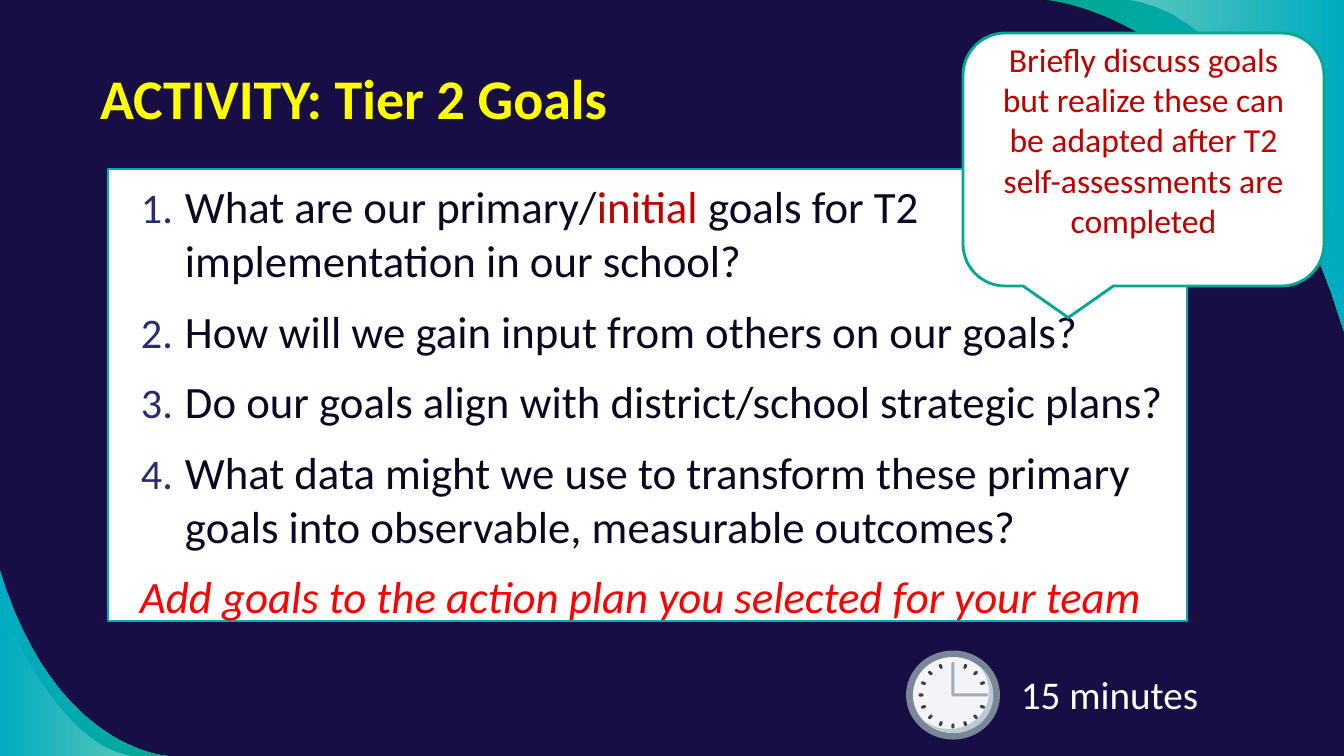
import math
from lxml import etree
from pptx import Presentation
from pptx import util as u
from pptx.dml.color import RGBColor
from pptx.enum import shapes, text
from pptx.oxml.ns import qn

PX = 914400 / 100.8
FONT = "Calibri"

NAVY = RGBColor(0x16, 0x0E, 0x44)
SHADE = RGBColor(0x12, 0x10, 0x2F)
CYAN = RGBColor(0x00, 0xAC, 0xC2)
GREEN = RGBColor(0x00, 0xA7, 0x91)
WHITE = RGBColor(0xFF, 0xFF, 0xFF)
YELLOW = RGBColor(0xFF, 0xFF, 0x00)
INK = RGBColor(0x0B, 0x07, 0x22)
NUMBER = RGBColor(0x29, 0x2C, 0x73)
DARK_RED = RGBColor(0xC0, 0x00, 0x00)
RED = RGBColor(0xFF, 0x00, 0x00)
RIM = RGBColor(0x79, 0x88, 0x98)
FACE = RGBColor(0xF2, 0xF4, 0xF7)
HAND = RGBColor(0xA3, 0xAD, 0xB8)
FACE_SHADOW = RGBColor(0xBC, 0xCA, 0xD6)
TICK = RGBColor(0x3D, 0x3D, 0x3D)

TITLE = "ACTIVITY: Tier 2 Goals"
QUESTIONS = [
    [("What are our primary/", INK), ("initial", DARK_RED),
     (" goals for T2 implementation in our school?", INK)],
    [("How will we gain input from others on our goals?", INK)],
    [("Do our goals align with district/school strategic plans?", INK)],
    [("What data might we use to transform these primary goals into "
      "observable, measurable outcomes?", INK)],
]
REMINDER = "Add goals to the action plan you selected for your team"
CALLOUT = ("Briefly discuss goals but realize these can be adapted after T2 "
           "self-assessments are completed")
DURATION = "15 minutes"

# Corner outlines: start, Bezier segments, closing corner; then (colour, opacity %) from left to right
CORNERS = [
    ((1344, 340), [((1245, 11), (1039, 0), (1039, 0))], (1344, 0), [(SHADE, 54)]),
    ((1046, 0), [((1046, 0), (1248, 11), (1344, 331))], (1344, 0), [(GREEN, 100), (CYAN, 100)]),
    ((1344, 246), [((1344, 246), (1252, 15), (1127, 0))], (1344, 0), [(WHITE, 36), (WHITE, 0)]),
    ((167, 756), [((167, 756), (54, 750), (0, 570))], (0, 756), [(CYAN, 100), (GREEN, 100)]),
    ((0, 606), [((0, 606), (56, 747), (133, 756))], (0, 756), [(WHITE, 0), (WHITE, 36)]),
]
CLOCK_CENTER = (953, 695)
CLOCK_SHADOW = ((979, 666), [
    ((993, 681), (992, 704), (978, 718)), ((970, 725), (960, 729), (950, 729)),
    ((939, 729), (931, 726), (923, 720)), ((931, 728), (943, 733), (954, 733)),
    ((964, 733), (974, 729), (982, 722)), ((998, 706), (997, 680), (979, 666))])
TICK_POSITIONS = 16
HIDDEN_TICKS = (0, 12)  # under the hands, at three and twelve o'clock


def px(*lengths):
    return [u.Emu(round(length * PX)) for length in lengths]


def style_run(run, size, color, bold=False, italic=False):
    run.font.name, run.font.size = FONT, u.Pt(size)
    run.font.color.rgb = color
    run.font.bold, run.font.italic = bold, italic


def paint(shape, colors):
    """Fill with one (colour, opacity) pair or a left-to-right gradient of two."""
    shape.shadow.inherit = False
    shape.line.fill.background()
    if len(colors) == 1:
        shape.fill.solid()
        shape.fill.fore_color.rgb = colors[0][0]
    else:
        shape.fill.gradient()
        shape.fill.gradient_angle = 0
        for stop, (color, _) in zip(shape.fill.gradient_stops, colors):
            stop.color.rgb = color
    for node, (_, opacity) in zip(shape.element.spPr.iter(qn("a:srgbClr")), colors):
        if opacity < 100:
            etree.SubElement(node, qn("a:alpha"), val=str(opacity * 1000))


def add_curve(slide, start, segments, corner, colors):
    points, current = [], start
    for first, second, end in segments:
        for step in range(1, 25):
            t = step / 24
            weights = ((1 - t) ** 3, 3 * t * (1 - t) ** 2, 3 * t * t * (1 - t), t ** 3)
            knots = (current, first, second, end)
            points.append(px(*(sum(w * k[axis] for w, k in zip(weights, knots))
                               for axis in (0, 1))))
        current = end
    if corner:
        points.append(px(*corner))
    builder = slide.shapes.build_freeform(*px(*start), scale=1.0)
    builder.add_line_segments(points, close=True)
    paint(builder.convert_to_shape(), colors)


def add_centered(slide, kind, center, width, height, color, rotation=0):
    left, top = center[0] - width / 2, center[1] - height / 2
    shape = slide.shapes.add_shape(kind, *px(left, top, width, height))
    shape.rotation = rotation
    if kind == shapes.MSO_SHAPE.ROUNDED_RECTANGLE:
        shape.adjustments[0] = 0.5
    paint(shape, [(color, 100)])


def place(shape, left, top, width, height):
    shape.left, shape.top, shape.width, shape.height = px(left, top, width, height)


def set_frame(frame, anchor, left, top, right, bottom):
    frame.word_wrap, frame.auto_size = True, text.MSO_AUTO_SIZE.NONE
    frame.vertical_anchor = anchor
    (frame.margin_left, frame.margin_top,
     frame.margin_right, frame.margin_bottom) = px(left, top, right, bottom)


def set_list_format(paragraph, margin, indent, numbered):
    paragraph.space_before, paragraph.space_after = u.Pt(0), u.Pt(12)
    properties = paragraph._p.get_or_add_pPr()
    properties.set("marL", str(px(margin)[0]))
    properties.set("indent", str(px(indent)[0]))
    if not numbered:
        etree.SubElement(properties, qn("a:buNone"))
        return
    color = etree.SubElement(properties, qn("a:buClr"))
    etree.SubElement(color, qn("a:srgbClr"), val=str(NUMBER))
    etree.SubElement(properties, qn("a:buSzPct"), val="94000")
    etree.SubElement(properties, qn("a:buFont"), typeface=FONT)
    etree.SubElement(properties, qn("a:buAutoNum"), type="arabicPeriod")


def add_clock(slide):
    oval, bar = shapes.MSO_SHAPE.OVAL, shapes.MSO_SHAPE.ROUNDED_RECTANGLE
    x, y = CLOCK_CENTER
    add_centered(slide, oval, CLOCK_CENTER, 94, 89, RIM)
    add_centered(slide, oval, CLOCK_CENTER, 80, 76, FACE)
    add_curve(slide, *CLOCK_SHADOW, None, [(FACE_SHADOW, 100)])
    add_centered(slide, bar, (x, y - 16), 3, 34, HAND)
    add_centered(slide, bar, (x + 17, y), 36, 3, HAND)
    for position in range(TICK_POSITIONS):
        if position not in HIDDEN_TICKS:
            degrees = position * 360 / TICK_POSITIONS
            angle = math.radians(degrees)
            center = (x + 32 * math.cos(angle), y + 31 * math.sin(angle))
            add_centered(slide, bar, center, 5, 3, TICK, degrees)


def main():
    presentation = Presentation()
    presentation.slide_width, presentation.slide_height = px(1344, 756)
    slide = presentation.slides.add_slide(presentation.slide_layouts[1])
    slide.background.fill.solid()
    slide.background.fill.fore_color.rgb = NAVY

    title, body = slide.shapes.title, slide.placeholders[1]
    place(title, 90, 51, 1034, 93)
    set_frame(title.text_frame, text.MSO_ANCHOR.MIDDLE, 10, 10, 10, 10)
    title.text_frame.text = TITLE
    title.text_frame.paragraphs[0].alignment = text.PP_ALIGN.LEFT
    style_run(title.text_frame.paragraphs[0].runs[0], 40, YELLOW, bold=True)

    place(body, 108, 169, 1079, 452)
    body.fill.solid()
    body.fill.fore_color.rgb = WHITE
    body.line.color.rgb, body.line.width = CYAN, u.Pt(2)
    set_frame(body.text_frame, text.MSO_ANCHOR.TOP, 10, 10, 10, 10)
    for index, parts in enumerate(QUESTIONS + [[(REMINDER, RED)]]):
        frame = body.text_frame
        paragraph = frame.add_paragraph() if index else frame.paragraphs[0]
        numbered = index < len(QUESTIONS)
        set_list_format(paragraph, *((67, -44) if numbered else (22, 0)), numbered)
        for words, color in parts:
            run = paragraph.add_run()
            run.text = words
            style_run(run, 32, color, italic=not numbered)

    for corner in CORNERS:
        add_curve(slide, *corner)
    add_clock(slide)

    duration = slide.shapes.add_textbox(*px(1011, 665, 200, 57))
    duration.text_frame.text = DURATION
    duration.text_frame.word_wrap = False
    style_run(duration.text_frame.paragraphs[0].runs[0], 28, WHITE)

    callout = slide.shapes.add_shape(
        shapes.MSO_SHAPE.ROUNDED_RECTANGULAR_CALLOUT, *px(963, 33, 361, 253))
    paint(callout, [(WHITE, 100)])
    callout.line.color.rgb, callout.line.width = GREEN, u.Pt(2)
    set_frame(callout.text_frame, text.MSO_ANCHOR.MIDDLE, 13, 7, 13, 47)
    callout.text_frame.text = CALLOUT
    callout.text_frame.paragraphs[0].alignment = text.PP_ALIGN.CENTER
    style_run(callout.text_frame.paragraphs[0].runs[0], 24, DARK_RED)

    presentation.save("out.pptx")


if __name__ == "__main__":
    main()
